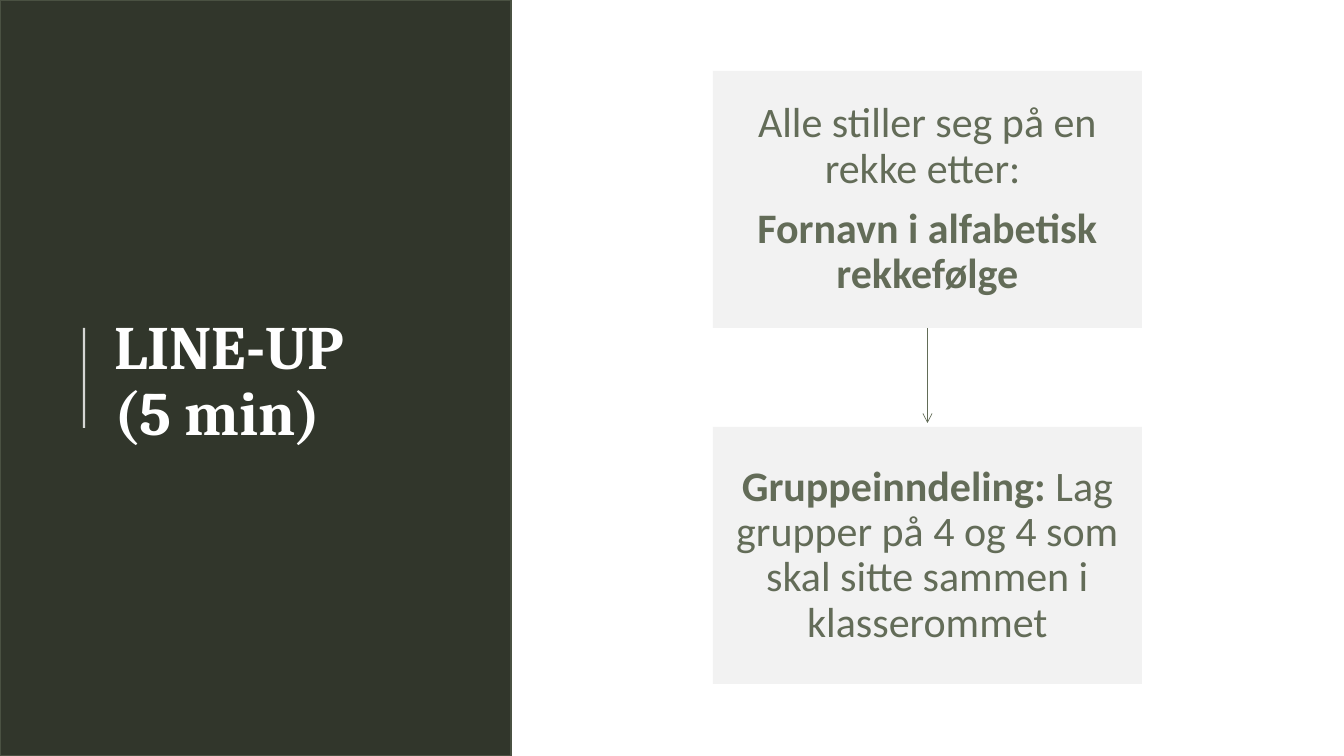
import pptx
import pptx.util
import pptx.dml.color
import pptx.enum.shapes
import pptx.enum.text
import pptx.oxml.ns
import lxml.etree

SLIDE_WIDTH, SLIDE_HEIGHT = 1344, 756
BOX_LEFT, BOX_TOP, BOX_WIDTH, BOX_HEIGHT = 713, 71, 429, 257
BOX_STEP = 356
ARROW_LENGTH = 95


def px(length):
    return pptx.util.Emu(round(length * 914400 / 100.8))


def color(value):
    return pptx.dml.color.RGBColor.from_string(value)


def add_element(parent, tag, **attributes):
    return lxml.etree.SubElement(parent, pptx.oxml.ns.qn(tag), attributes)


class SlideBuilder:
    heading_font = "Cambria"
    body_font = "Calibri"
    panel_fill = "31362B"
    panel_line = "4A5142"
    box_fill = "F2F2F2"
    box_text = "636C58"
    arrow_line = "626C57"
    light = "FFFFFF"

    def __init__(self, presentation):
        self.slide = presentation.slides.add_slide(presentation.slide_layouts[5])

    def add_run(self, paragraph, text, font_name, size, font_color, bold):
        run = paragraph.add_run()
        run.text = text
        run.font.name = font_name
        run.font.size = pptx.util.Pt(size)
        run.font.bold = bold
        run.font.color.rgb = color(font_color)

    def title(self, left, top, width, height, lines):
        shape = self.slide.shapes.title
        shape.left, shape.top = px(left), px(top)
        shape.width, shape.height = px(width), px(height)
        frame = shape.text_frame
        frame.word_wrap = True
        frame.auto_size = pptx.enum.text.MSO_AUTO_SIZE.NONE
        frame.vertical_anchor = pptx.enum.text.MSO_ANCHOR.MIDDLE
        paragraph = frame.paragraphs[0]
        paragraph.alignment = pptx.enum.text.PP_ALIGN.LEFT
        paragraph.line_spacing = 0.9
        for index, line in enumerate(lines):
            if index:
                paragraph.add_line_break()
            self.add_run(paragraph, line, self.heading_font, 44, self.light, True)

    def rectangle(self, left, top, width, height, fill, line=None):
        shape = self.slide.shapes.add_shape(
            pptx.enum.shapes.MSO_SHAPE.RECTANGLE, px(left), px(top), px(width), px(height))
        shape.shadow.inherit = False
        shape.fill.solid()
        shape.fill.fore_color.rgb = color(fill)
        if line:
            shape.line.color.rgb = color(line)
            shape.line.width = pptx.util.Pt(1)
        else:
            shape.line.fill.background()
        return shape

    def text_box(self, left, top, width, height, paragraphs):
        shape = self.rectangle(left, top, width, height, self.box_fill)
        frame = shape.text_frame
        frame.word_wrap = True
        frame.vertical_anchor = pptx.enum.text.MSO_ANCHOR.MIDDLE
        frame.margin_left = frame.margin_right = px(21)
        frame.margin_top = frame.margin_bottom = px(22)
        for index, runs in enumerate(paragraphs):
            paragraph = frame.add_paragraph() if index else frame.paragraphs[0]
            paragraph.alignment = pptx.enum.text.PP_ALIGN.CENTER
            paragraph.line_spacing = 0.9
            paragraph.space_after = pptx.util.Pt(10.5)
            for text, bold in runs:
                self.add_run(paragraph, text, self.body_font, 30, self.box_text, bold)
        return shape

    def vertical_line(self, x, start, end, line, width):
        connector = self.slide.shapes.add_connector(
            pptx.enum.shapes.MSO_CONNECTOR.STRAIGHT, px(x), px(start), px(x), px(end))
        connector.line.color.rgb = color(line)
        connector.line.width = pptx.util.Pt(width)
        add_element(connector._element.spPr, "a:effectLst")
        return connector

    def accent(self, x, start, end):
        connector = self.vertical_line(x, start, end, self.light, 1.5)
        fill = connector.line._ln.find(".//" + pptx.oxml.ns.qn("a:srgbClr"))
        add_element(fill, "a:alpha", val="80000")

    def arrow(self, source, x, start, end):
        connector = self.vertical_line(x, start, end, self.arrow_line, 0.5)
        connector.begin_connect(source, 2)
        add_element(connector.line._ln, "a:tailEnd", type="arrow")


def main():
    presentation = pptx.Presentation()
    presentation.slide_width = px(SLIDE_WIDTH)
    presentation.slide_height = px(SLIDE_HEIGHT)
    builder = SlideBuilder(presentation)

    panel = builder.rectangle(
        0, 0, 511, SLIDE_HEIGHT, builder.panel_fill, builder.panel_line)
    builder.slide.shapes.title._element.addprevious(panel._element)
    builder.accent(84, 328, 428)
    builder.title(104, 79, 372, 607, ["LINE-UP", "(5 min)"])

    steps = [
        [[("Alle stiller seg på en rekke etter: ", False)],
         [("Fornavn i alfabetisk rekkefølge", True)]],
        [[("Gruppeinndeling:", True),
          (" Lag grupper på 4 og 4 som skal sitte sammen i klasserommet", False)]],
    ]
    boxes = [
        builder.text_box(BOX_LEFT, BOX_TOP + index * BOX_STEP, BOX_WIDTH, BOX_HEIGHT, step)
        for index, step in enumerate(steps)
    ]
    arrow_start = BOX_TOP + BOX_HEIGHT
    builder.arrow(
        boxes[0], BOX_LEFT + BOX_WIDTH / 2, arrow_start, arrow_start + ARROW_LENGTH)

    presentation.save("out.pptx")


if __name__ == "__main__":
    main()
